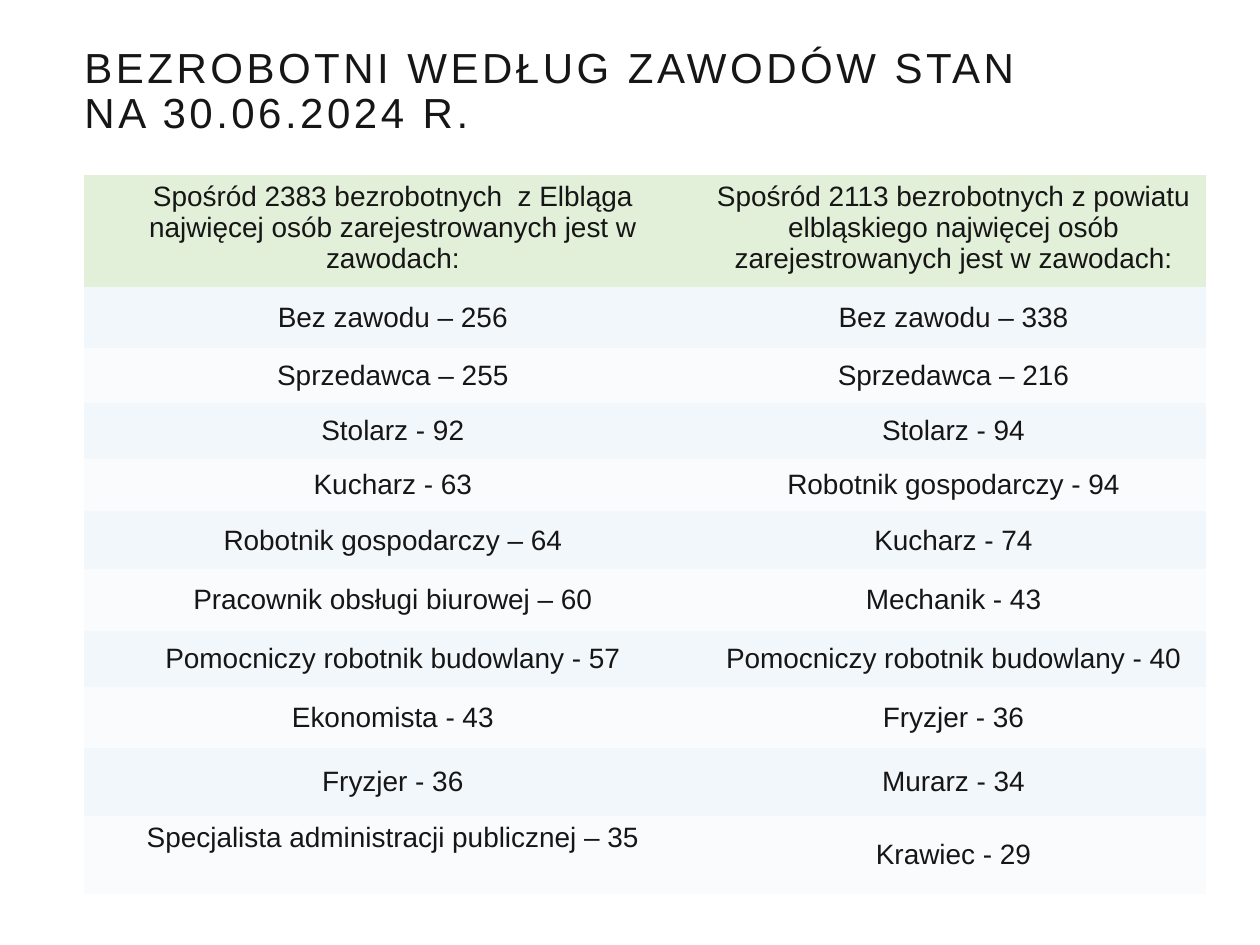
import pptx
import pptx.util
import pptx.dml.color
import pptx.enum.text

Inches, Pt = pptx.util.Inches, pptx.util.Pt
ALIGN, ANCHOR = pptx.enum.text.PP_ALIGN, pptx.enum.text.MSO_ANCHOR

COLORS = {"text": "171616", "header": "E2EFD9", "odd": "F2F7FB", "even": "F9FBFD"}
FONT = "Arial"
TITLE = ["BEZROBOTNI WEDŁUG ZAWODÓW STAN ", "NA 30.06.2024 R."]
COL_SHARES = [0.55, 0.45]
ROW_HEIGHTS = [0.89, 0.48, 0.44, 0.44, 0.42, 0.46, 0.49, 0.44, 0.49, 0.54, 0.62]
ROWS = [
    ("Spośród 2383 bezrobotnych  z Elbląga najwięcej osób zarejestrowanych jest w zawodach:",
     "Spośród 2113 bezrobotnych z powiatu elbląskiego najwięcej osób zarejestrowanych jest w zawodach:"),
    ("Bez zawodu – 256", "Bez zawodu – 338"),
    ("Sprzedawca – 255", "Sprzedawca – 216"),
    ("Stolarz - 92", "Stolarz - 94"),
    ("Kucharz - 63", "Robotnik gospodarczy - 94"),
    ("Robotnik gospodarczy – 64", "Kucharz - 74"),
    ("Pracownik obsługi biurowej – 60", "Mechanik - 43"),
    ("Pomocniczy robotnik budowlany - 57", "Pomocniczy robotnik budowlany - 40"),
    ("Ekonomista - 43", "Fryzjer - 36"),
    ("Fryzjer - 36", "Murarz - 34"),
    ("Specjalista administracji publicznej – 35", "Krawiec - 29"),
]
TOP_CELLS = {(0, 0), (0, 1), (len(ROWS) - 1, 0)}


def rgb(name):
    """Return the named colour."""
    return pptx.dml.color.RGBColor.from_string(COLORS[name])


def style_font(font, size):
    """Apply the common typeface and text colour."""
    font.name, font.size, font.bold = FONT, Pt(size), False
    font.color.rgb = rgb("text")


def place_title(s, left, top, width, height):
    """Fill the title placeholder with two letter-spaced lines."""
    sp = s.shapes.title
    sp.left, sp.top, sp.width, sp.height = map(Inches, (left, top, width, height))
    tf = sp.text_frame
    tf.word_wrap, tf.vertical_anchor = True, ANCHOR.MIDDLE
    tf.auto_size = pptx.enum.text.MSO_AUTO_SIZE.NONE
    tf.margin_left = tf.margin_right = tf.margin_top = tf.margin_bottom = Inches(0.2)
    p = tf.paragraphs[0]
    p.alignment, p.line_spacing = ALIGN.LEFT, 0.9
    p._p.get_or_add_pPr().set("marL", str(Inches(0.19)))
    style_font(p.font, 24)
    for i, line in enumerate(TITLE):
        if i:
            p.add_line_break()
        r = p.add_run()
        r.text = line
        r.font._element.set("spc", "200")


def place_table(s, left, top, width):
    """Build the two-column table of occupations with banded rows."""
    box = map(Inches, (left, top, width, sum(ROW_HEIGHTS)))
    table = s.shapes.add_table(len(ROWS), len(COL_SHARES), *box).table
    for column, share in zip(table.columns, COL_SHARES):
        column.width = Inches(width * share)
    for i, (texts, height) in enumerate(zip(ROWS, ROW_HEIGHTS)):
        table.rows[i].height = Inches(height)
        band = "header" if i == 0 else "odd" if i % 2 else "even"
        for j, text in enumerate(texts):
            cell = table.cell(i, j)
            cell.fill.solid()
            cell.fill.fore_color.rgb = rgb(band)
            cell.vertical_anchor = ANCHOR.TOP if (i, j) in TOP_CELLS else ANCHOR.MIDDLE
            cell.text = text
            p = cell.text_frame.paragraphs[0]
            p.alignment = ALIGN.CENTER
            style_font(p.font, 16)
    no_style = "{2D5ABB26-0587-4C30-8999-92F81FD0307C}"
    table._tbl.tblPr.find(pptx.oxml.ns.qn("a:tableStyleId")).text = no_style


def main():
    """Create the slide and save it."""
    prs = pptx.Presentation()
    prs.slide_width, prs.slide_height = Inches(10), Inches(7.5)
    s = prs.slides.add_slide(prs.slide_layouts[5])
    place_title(s, 0.28, 0.16, 9.45, 1.15)
    place_table(s, 0.67, 1.39, 8.9)
    prs.save("out.pptx")


if __name__ == "__main__":
    main()
